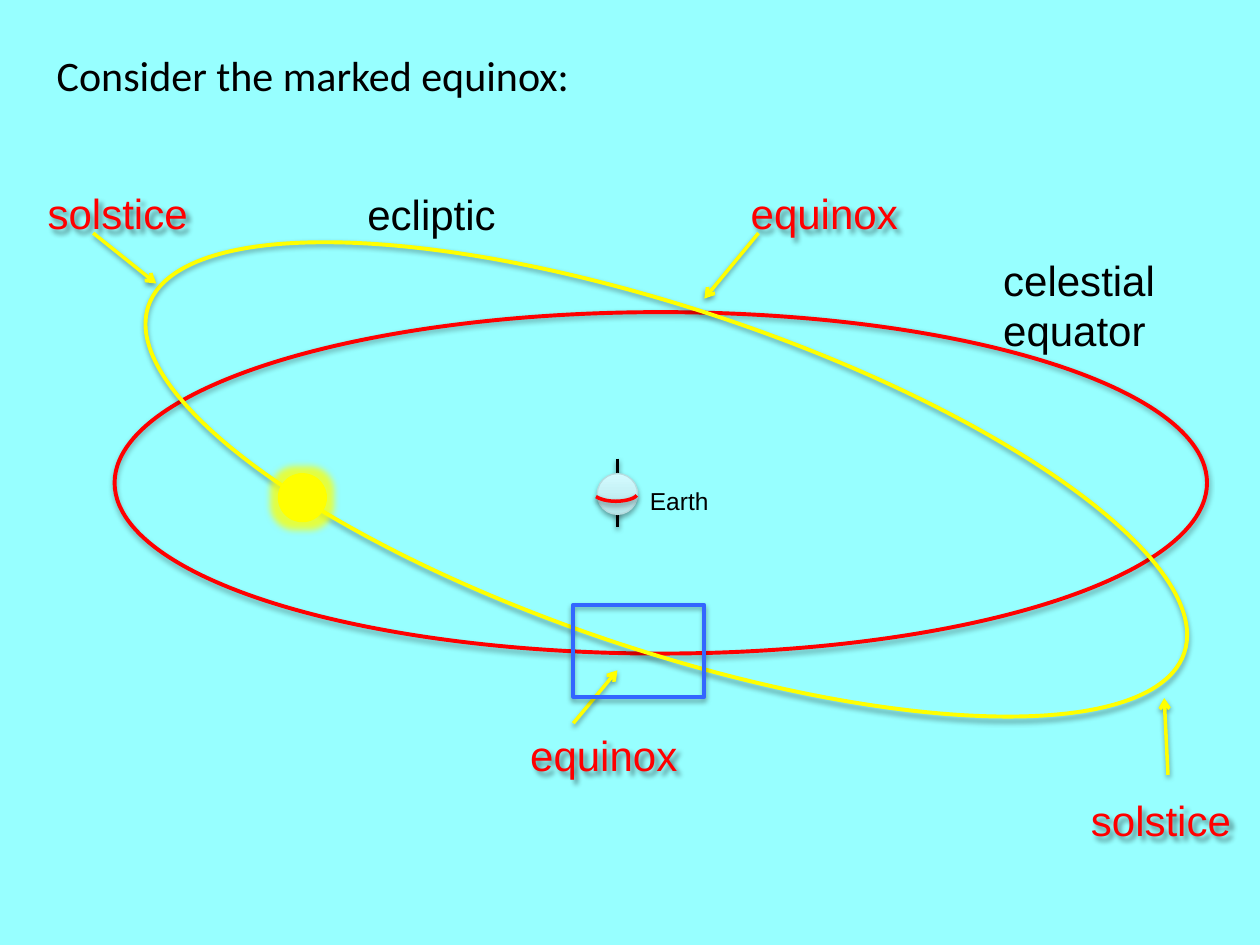
from lxml import etree
from pptx import Presentation
from pptx.dml.color import RGBColor
from pptx.enum.shapes import MSO_CONNECTOR, MSO_SHAPE
from pptx.enum.text import MSO_ANCHOR, PP_ALIGN
from pptx.oxml.ns import qn
from pptx.util import Inches, Pt

OVAL, RECT = MSO_SHAPE.OVAL, MSO_SHAPE.RECTANGLE
STRAIGHT = MSO_CONNECTOR.STRAIGHT
LEFT, TOP = PP_ALIGN.LEFT, MSO_ANCHOR.TOP
W, H = 10, 7.5
BLACK, RED, YELLOW, BLUE = "000000", "FF0000", "FFFF00", "3366FF"
RIM = "B6DCDF"
SHAPE_SHADOW = dict(alpha=35, blur=3.1, dist=1.8, angle=90)
LINE_SHADOW = dict(alpha=38, blur=3.1, dist=1.6, angle=90)
TEXT_SHADOW = dict(alpha=43, blur=3, dist=3, angle=45)


def rgb(value):
    return RGBColor.from_string(value)


def inside(box, x, y, w=0, h=0):
    left, top, width, height = box
    return left + x * width, top + y * height, w * width, h * height


def add_effect(sp, tag, color, alpha, **attrs):
    effects = etree.SubElement(sp._element.spPr, qn("a:effectLst"))
    effect = etree.SubElement(effects, qn(tag), **attrs)
    clr = etree.SubElement(effect, qn("a:srgbClr"), val=color)
    etree.SubElement(clr, qn("a:alpha"), val=str(alpha * 1000))


def add_shadow(sp, alpha, blur, dist, angle):
    add_effect(sp, "a:outerShdw", BLACK, alpha, blurRad=str(Pt(blur)),
               dist=str(Pt(dist)), dir=str(angle * 60000), rotWithShape="0")


def set_line(sp, color, width):
    sp.line.color.rgb = rgb(color)
    sp.line.width = Pt(width)


def write(sp, text, size=24, font="Arial", color=BLACK):
    tf = sp.text_frame
    tf.word_wrap = True
    tf.vertical_anchor = TOP
    p = tf.paragraphs[0]
    p.alignment = LEFT
    r = p.add_run()
    r.text = text
    r.font.size = Pt(size)
    r.font.name = font
    r.font.color.rgb = rgb(color)


def add_label(s, box, text, shadow=None, **fmt):
    sp = s.shapes.add_textbox(*map(Inches, box))
    write(sp, text, **fmt)
    if shadow:
        add_shadow(sp, **shadow)


def add_outline(s, kind, box, color, width=2.25, rotation=0, shadow=SHAPE_SHADOW):
    sp = s.shapes.add_shape(kind, *map(Inches, box))
    sp.rotation = rotation
    sp.fill.background()
    set_line(sp, color, width)
    if shadow:
        add_shadow(sp, **shadow)
    return sp


def add_line(s, start, end, color, arrow=False):
    cx = s.shapes.add_connector(STRAIGHT, *map(Inches, (*start, *end)))
    set_line(cx, color, 2)
    if arrow:
        etree.SubElement(cx.line._get_or_add_ln(), qn("a:tailEnd"), type="arrow")
    add_shadow(cx, **LINE_SHADOW)


def add_title(s, box, text):
    sp = s.shapes.title
    sp.left, sp.top, sp.width, sp.height = map(Inches, box)
    write(sp, text, font="Calibri")


def add_orbits(s, box):
    add_outline(s, OVAL, inside(box, 0, 0.01, 1, 1), RED)
    add_outline(s, OVAL, inside(box, 0.005, 0, 1, 1), YELLOW, rotation=18.5)
    add_label(s, inside(box, 0.22, -0.37, 0.15, 0.18), "ecliptic")
    add_label(s, inside(box, 0.802, -0.177, 0.247, 0.15), "celestial equator")


def add_sun(s, box):
    sp = add_outline(s, OVAL, box, YELLOW, 0.75, shadow=None)
    sp.fill.solid()
    sp.fill.fore_color.rgb = rgb(YELLOW)
    add_effect(sp, "a:glow", YELLOW, 75, rad=str(Pt(8)))


def bezier(points, t):
    weights = (1 - t) ** 3, 3 * t * (1 - t) ** 2, 3 * t * t * (1 - t), t ** 3
    return [sum(w * p[i] for w, p in zip(weights, points)) for i in (0, 1)]


def add_earth(s, box):
    top, bottom = inside(box, 0.5, 0)[:2], inside(box, 0.5, 1)[:2]
    add_line(s, top, bottom, BLACK)
    globe = add_outline(s, OVAL, inside(box, 0, 0.22, 1, 0.6), RIM, 0.75)
    globe.fill.gradient()
    globe.fill.gradient_angle = 90
    for stop, (position, color) in zip(globe.fill.gradient_stops,
                                       ((0, "B5E5E9"), (1, "D3FBFF"))):
        stop.position = position
        stop.color.rgb = rgb(color)
    controls = [inside(box, x, y)[:2] for x, y in
                ((-0.03, 0.56), (0.3, 0.68), (0.9, 0.62), (0.98, 0.54))]
    points = [tuple(map(Inches, bezier(controls, i / 12))) for i in range(13)]
    builder = s.shapes.build_freeform(*points[0])
    builder.add_line_segments(points[1:], close=False)
    band = builder.convert_to_shape()
    band.fill.background()
    set_line(band, RED, 2)
    add_shadow(band, **LINE_SHADOW)
    add_label(s, inside(box, 1, 0.31, 3.4, 0.63), "Earth", size=14)


def add_callout(s, box, text, start, end):
    add_label(s, box, text, color=RED, shadow=TEXT_SHADOW)
    add_line(s, start, end, YELLOW, arrow=True)


def main():
    prs = Presentation()
    prs.slide_width, prs.slide_height = Inches(W), Inches(H)
    s = prs.slides.add_slide(prs.slide_layouts[5])
    s.background.fill.solid()
    s.background.fill.fore_color.rgb = rgb("97FFFF")

    add_title(s, (0.35, 0.34, 4.5, 0.5), "Consider the marked equinox:")
    add_orbits(s, (0.91, 2.45, 8.67, 2.71))
    add_sun(s, (2.21, 3.76, 0.38, 0.38))
    add_earth(s, (4.74, 3.64, 0.32, 0.54))
    callouts = (
        ((0.28, 1.44, 1.43, 0.5), "solstice", (0.74, 1.85), (1.24, 2.25)),
        ((8.56, 6.26, 1.37, 0.5), "solstice", (9.27, 6.15), (9.24, 5.54)),
        ((4.11, 5.74, 1.56, 0.5), "equinox", (4.55, 5.74), (4.9, 5.32)),
        ((5.86, 1.44, 1.4, 0.5), "equinox", (6.02, 1.85), (5.59, 2.37)),
    )
    for callout in callouts:
        add_callout(s, *callout)
    add_outline(s, RECT, (4.55, 4.8, 1.04, 0.73), BLUE)
    prs.save("out.pptx")


if __name__ == "__main__":
    main()
